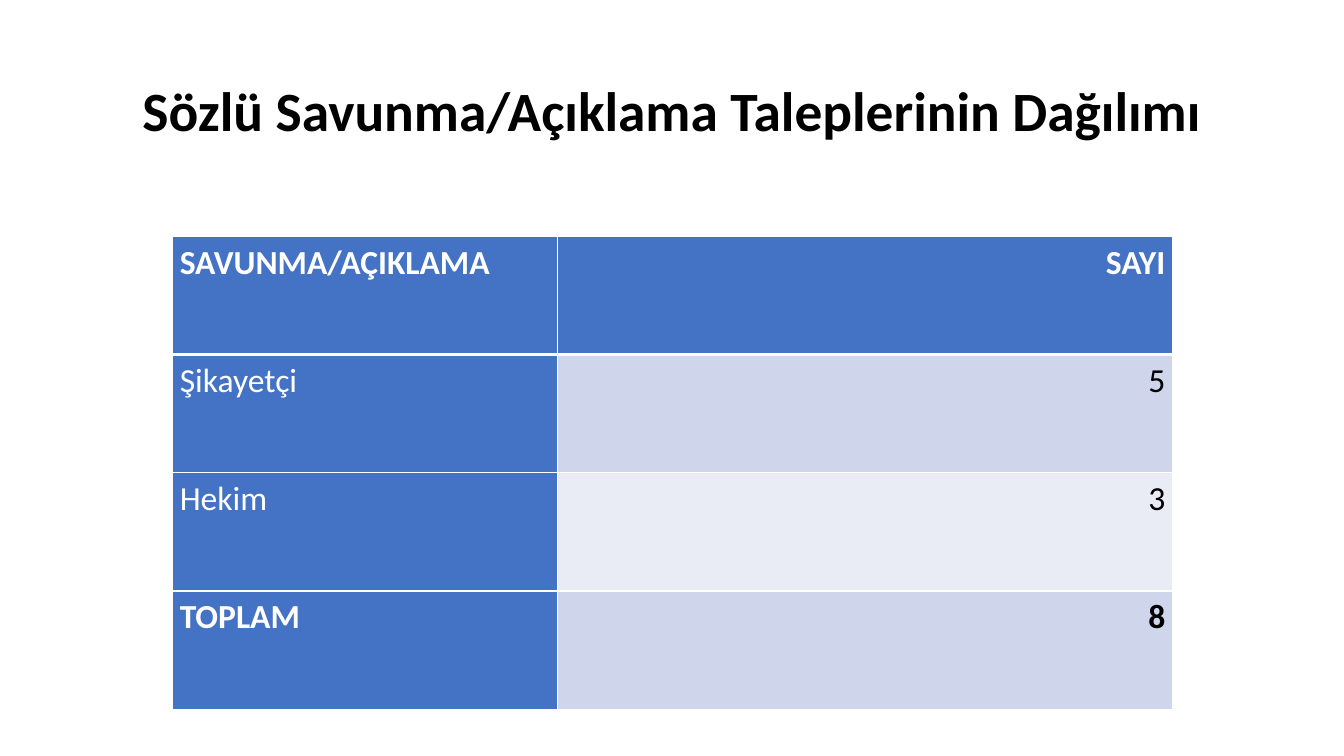
from lxml import etree
from pptx import Presentation
from pptx.dml.color import RGBColor
from pptx.enum.text import MSO_ANCHOR, PP_ALIGN
from pptx.oxml.ns import qn
from pptx.util import Cm, Pt

LEFT, CENTER, RIGHT = PP_ALIGN.LEFT, PP_ALIGN.CENTER, PP_ALIGN.RIGHT
MIDDLE = MSO_ANCHOR.MIDDLE

TITLE = "Sözlü Savunma/Açıklama Taleplerinin Dağılımı"
ROWS = [
    ("SAVUNMA/AÇIKLAMA", "SAYI"),
    ("Şikayetçi", "5"),
    ("Hekim", "3"),
    ("TOPLAM", "8"),
]
COLUMN_WIDTHS = [9.7, 15.5]
COLUMN_ALIGNMENTS = [LEFT, RIGHT]
ROW_HEIGHT = 2.98
TITLE_BOX = {"left": Cm(2.33), "top": Cm(1.02), "width": Cm(29.21), "height": Cm(3.68)}
CELL_MARGINS = {"margin_left": Cm(0.18), "margin_right": Cm(0.18), "margin_top": 0, "margin_bottom": 0}
BLUE, BANDS = "4472C4", ["E9EBF5", "CFD5EA"]
WHITE, BLACK = "FFFFFF", "000000"


def color(value):
    return RGBColor.from_string(value)


def set_attributes(target, values):
    for name, value in values.items():
        setattr(target, name, value)


def write(text_frame, text, text_color, font_format, paragraph_format):
    paragraph = text_frame.paragraphs[0]
    set_attributes(paragraph, paragraph_format)
    run = paragraph.add_run()
    run.text = text
    set_attributes(run.font, {"name": "Calibri", **font_format})
    run.font.color.rgb = color(text_color)


def add_borders(cell, widths):
    properties = cell._tc.get_or_add_tcPr()
    for position, (side, width) in enumerate(widths.items()):
        line = etree.Element(qn(f"a:ln{side}"), w=str(Pt(width)))
        fill = etree.SubElement(line, qn("a:solidFill"))
        etree.SubElement(fill, qn("a:srgbClr"), val=WHITE)
        properties.insert(position, line)


def add_title(slide):
    title = slide.shapes.title
    set_attributes(title, TITLE_BOX)
    set_attributes(title.text_frame, {"vertical_anchor": MIDDLE, "word_wrap": True})
    write(title.text_frame, TITLE, BLACK, {"size": Pt(39.6), "bold": True},
          {"alignment": CENTER, "line_spacing": 0.9})


def add_request_table(slide):
    frame = slide.shapes.add_table(
        len(ROWS), len(COLUMN_WIDTHS), Cm(4.35), Cm(5.95),
        Cm(sum(COLUMN_WIDTHS)), Cm(ROW_HEIGHT * len(ROWS)))
    table = frame.table
    for column, width in zip(table.columns, COLUMN_WIDTHS):
        column.width = Cm(width)
    for row_index, values in enumerate(ROWS):
        table.rows[row_index].height = Cm(ROW_HEIGHT)
        for column_index, text in enumerate(values):
            cell = table.cell(row_index, column_index)
            set_attributes(cell, CELL_MARGINS)
            add_borders(cell, {"L": 1, "R": 1, "T": 3 if row_index == 1 else 1,
                               "B": 3 if row_index == 0 else 1})
            is_heading = row_index == 0 or column_index == 0
            cell.fill.solid()
            cell.fill.fore_color.rgb = color(BLUE if is_heading else BANDS[row_index % 2])
            write(cell.text_frame, text, WHITE if is_heading else BLACK,
                  {"size": Pt(24), "bold": row_index in (0, len(ROWS) - 1)},
                  {"alignment": COLUMN_ALIGNMENTS[column_index],
                   "line_spacing": 1.15, "space_after": Pt(10)})


def main():
    presentation = Presentation()
    presentation.slide_width, presentation.slide_height = Cm(33.87), Cm(19.05)
    slide = presentation.slides.add_slide(presentation.slide_layouts[5])
    add_title(slide)
    add_request_table(slide)
    presentation.save("out.pptx")


if __name__ == "__main__":
    main()
